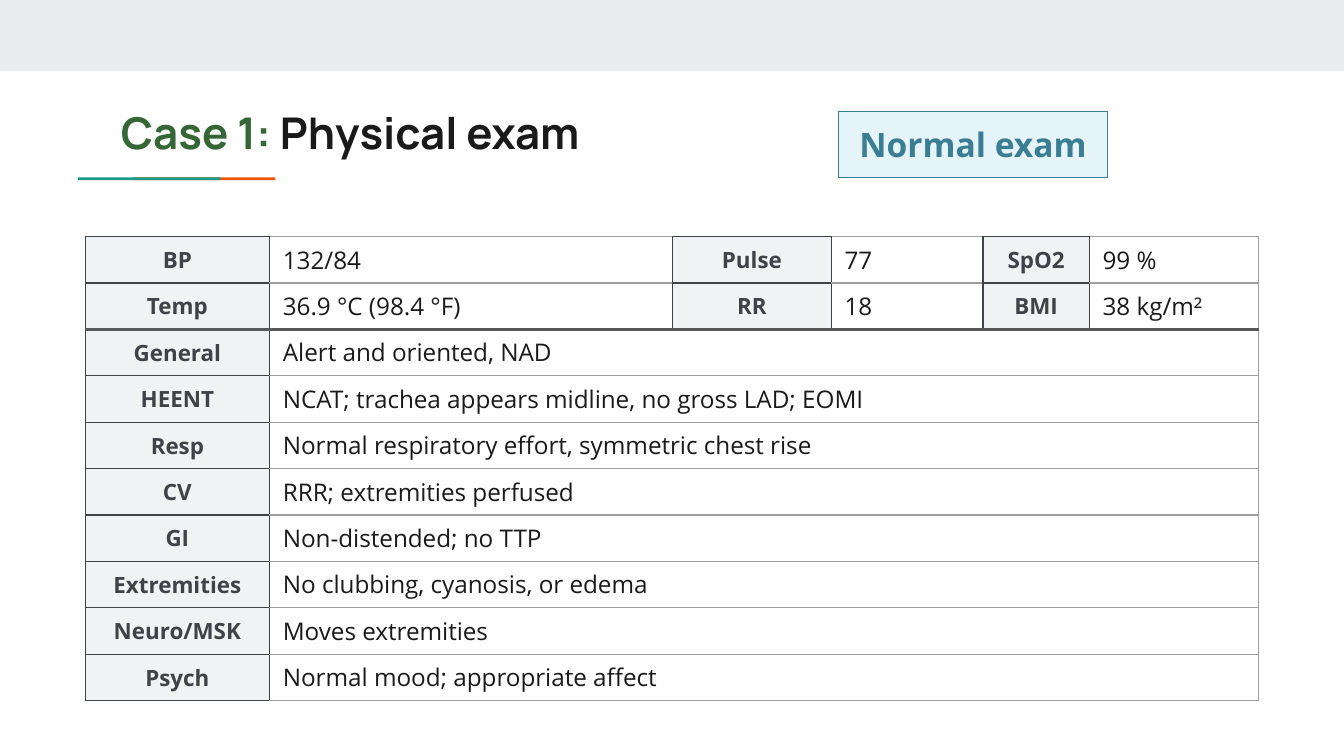
"""Build the Case 1 physical exam slide with its vitals and findings table."""
from lxml.etree import SubElement
from pptx import Presentation
from pptx.dml.color import RGBColor
from pptx.enum.shapes import MSO_SHAPE
from pptx.enum.text import MSO_ANCHOR, MSO_AUTO_SIZE, PP_ALIGN
from pptx.oxml.ns import qn
from pptx.util import Inches, Pt

GREEN = RGBColor(0x35, 0x66, 0x35)
INK = RGBColor(0x1A, 0x1A, 0x1A)
WHITE = RGBColor(0xFF, 0xFF, 0xFF)
BAND = RGBColor(0xE9, 0xED, 0xEE)
ORANGE = RGBColor(0xEB, 0x56, 0x00)
TEAL = RGBColor(0x1A, 0x99, 0x88)
BLUE = RGBColor(0x3B, 0x7E, 0x94)
PALE_BLUE = RGBColor(0xE5, 0xF4, 0xF8)
LABEL_INK = RGBColor(0x40, 0x42, 0x47)
LABEL_FILL = RGBColor(0xF1, 0xF2, 0xF3)
GRAY = RGBColor(0x9E, 0x9E, 0x9E)
DIVIDER = RGBColor(0x59, 0x59, 0x59)

VITALS = [
    ["BP", "132/84", "Pulse", "77", "SpO2", "99 %"],
    ["Temp", "36.9 °C (98.4 °F)", "RR", "18", "BMI", "38 kg/m²"],
]
FINDINGS = [
    ["General", "Alert and oriented, NAD"],
    ["HEENT", "NCAT; trachea appears midline, no gross LAD; EOMI"],
    ["Resp", "Normal respiratory effort, symmetric chest rise"],
    ["CV", "RRR; extremities perfused"],
    ["GI", "Non-distended; no TTP"],
    ["Extremities", "No clubbing, cyanosis, or edema"],
    ["Neuro/MSK", "Moves extremities"],
    ["Psych", "Normal mood; appropriate affect"],
]
ROWS = VITALS + FINDINGS
COLUMN_WIDTHS = [1.37, 3, 1.18, 1.13, 0.79, 1.26]
ROW_HEIGHT = 0.31
LAST_COLUMN = len(COLUMN_WIDTHS) - 1


def add_run(paragraph, text, font_name, size, color, bold):
    run = paragraph.add_run()
    run.text = text
    run.font.name = font_name
    run.font.size = Pt(size)
    run.font.color.rgb = color
    run.font.bold = bold


def add_border(cell, side, color, width):
    line = SubElement(cell._tc.get_or_add_tcPr(), qn(f"a:ln{side}"), w=str(Pt(width)))
    fill = SubElement(line, qn("a:solidFill"))
    SubElement(fill, qn("a:srgbClr"), val=str(color))


presentation = Presentation()
presentation.slide_width = Inches(10)
presentation.slide_height = Inches(10) * 9 // 16
slide = presentation.slides.add_slide(presentation.slide_layouts[5])
slide.background.fill.solid()
slide.background.fill.fore_color.rgb = WHITE

for left, top, width, height, color in [
    (0, 0, 10, 0.53, BAND),
    (0.99, 1.32, 1.06, 0.02, ORANGE),
    (0.58, 1.32, 1.06, 0.02, TEAL),
]:
    bar = slide.shapes.add_shape(
        MSO_SHAPE.RECTANGLE, Inches(left), Inches(top), Inches(width), Inches(height))
    bar.shadow.inherit = False
    bar.fill.solid()
    bar.fill.fore_color.rgb = color
    bar.line.fill.background()

title = slide.shapes.title
title.left, title.top = Inches(0.8), Inches(0.69)
title.width, title.height = Inches(8.41), Inches(0.59)

badge = slide.shapes.add_shape(
    MSO_SHAPE.RECTANGLE, Inches(6.24), Inches(0.83), Inches(2), Inches(0.49))
badge.shadow.inherit = False
badge.fill.solid()
badge.fill.fore_color.rgb = PALE_BLUE
badge.line.color.rgb = BLUE
badge.line.width = Pt(0.75)

for shape, anchor, alignment, runs in [
    (title, MSO_ANCHOR.TOP, PP_ALIGN.LEFT,
     [("Case 1:", "Manrope", 23.4, GREEN), (" Physical exam", "Manrope", 23.4, INK)]),
    (badge, MSO_ANCHOR.MIDDLE, PP_ALIGN.CENTER,
     [("Normal exam", "Open Sans", 18, BLUE)]),
]:
    frame = shape.text_frame
    frame.word_wrap = True
    frame.auto_size = MSO_AUTO_SIZE.NONE
    frame.vertical_anchor = anchor
    frame.margin_left = frame.margin_right = Inches(0.1)
    frame.margin_top = frame.margin_bottom = Inches(0.1)
    paragraph = frame.paragraphs[0]
    paragraph.alignment = alignment
    for text, font_name, size, color in runs:
        add_run(paragraph, text, font_name, size, color, True)

table = slide.shapes.add_table(
    len(ROWS), len(COLUMN_WIDTHS), Inches(0.635), Inches(1.76),
    Inches(sum(COLUMN_WIDTHS)), Inches(ROW_HEIGHT * len(ROWS))).table
table.first_row = False
table.horz_banding = False
for column, width in zip(table.columns, COLUMN_WIDTHS):
    column.width = Inches(width)

for row_index, texts in enumerate(ROWS):
    table.rows[row_index].height = Inches(ROW_HEIGHT)
    if len(texts) == 2:
        table.cell(row_index, 1).merge(table.cell(row_index, LAST_COLUMN))
    for column_index in range(len(COLUMN_WIDTHS)):
        cell = table.cell(row_index, column_index)
        is_label = column_index % 2 == 0 and not cell.is_spanned
        edge = LABEL_INK if is_label else GRAY
        left_edge = GRAY if cell.is_spanned else LABEL_INK
        ends_row = column_index == LAST_COLUMN or (len(texts) == 2 and not is_label)
        right_edge = GRAY if ends_row else LABEL_INK
        top = (DIVIDER, 2.25) if row_index == len(VITALS) else (edge, 0.75)
        bottom = (DIVIDER, 2.25) if row_index == len(VITALS) - 1 else (edge, 0.75)
        add_border(cell, "L", left_edge, 0.75)
        add_border(cell, "R", right_edge, 0.75)
        add_border(cell, "T", *top)
        add_border(cell, "B", *bottom)
        if is_label:
            cell.fill.solid()
            cell.fill.fore_color.rgb = LABEL_FILL
        else:
            cell.fill.background()
        cell.margin_left = cell.margin_right = Inches(0.1)
        cell.margin_top = cell.margin_bottom = Inches(0.05)
        if cell.is_spanned:
            continue
        paragraph = cell.text_frame.paragraphs[0]
        if is_label:
            cell.vertical_anchor = MSO_ANCHOR.MIDDLE
            paragraph.alignment = PP_ALIGN.CENTER
            add_run(paragraph, texts[column_index], "Open Sans", 12, LABEL_INK, True)
        else:
            paragraph.space_after = Pt(12)
            add_run(paragraph, texts[column_index], "Open Sans", 13, INK, False)

presentation.save("out.pptx")
